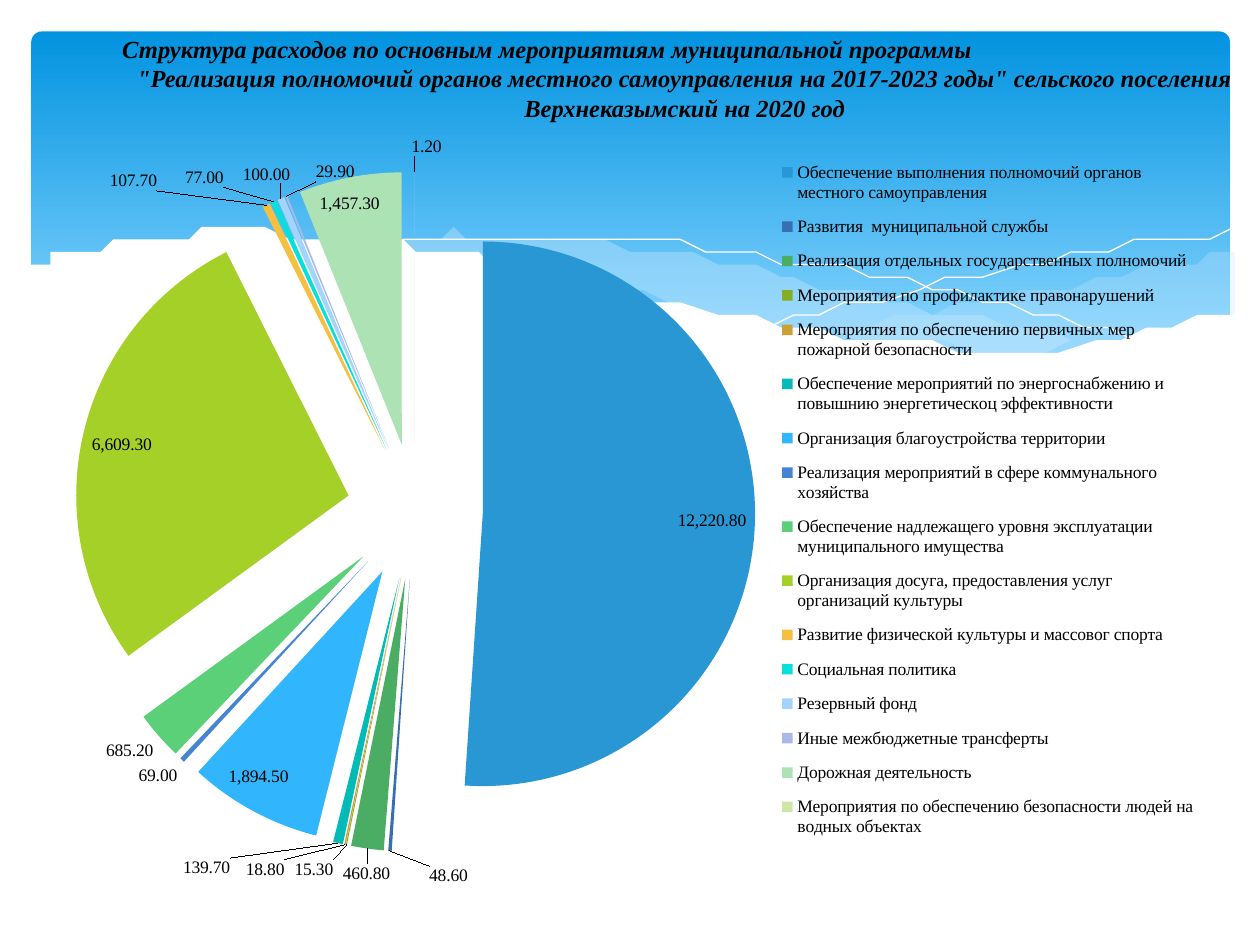
from lxml import etree
from pptx import Presentation
from pptx.chart.data import CategoryChartData
from pptx.dml.color import RGBColor
from pptx.enum.chart import XL_CHART_TYPE, XL_LABEL_POSITION, XL_LEGEND_POSITION
from pptx.enum.shapes import MSO_SHAPE
from pptx.enum.text import MSO_ANCHOR, MSO_AUTO_SIZE, PP_ALIGN
from pptx.oxml.ns import qn
from pptx.util import Inches, Pt

prs = Presentation()
prs.slide_width, prs.slide_height = Inches(10), Inches(7.5)
U = prs.slide_width // 100
s = prs.slides.add_slide(prs.slide_layouts[5])


def rgb(value):
    return RGBColor.from_string(value)


def add_layout(parent, index, **values):
    for old in parent.findall(qn("c:layout")):
        parent.remove(old)
    layout = etree.Element(qn("c:layout"))
    manual = etree.SubElement(layout, qn("c:manualLayout"))
    for key, value in values.items():
        etree.SubElement(manual, qn(f"c:{key}")).set("val", str(value))
    parent.insert(index, layout)


banner = s.shapes.add_shape(MSO_SHAPE.ROUNDED_RECTANGLE, *[round(v * U) for v in (2.5, 2.5, 95.1, 27)])
banner.adjustments[0] = 0.03
banner.shadow.inherit = False
banner.line.fill.background()
banner.fill.gradient()
banner.fill.gradient_angle = 270
for stop, position, color in zip(banner.fill.gradient_stops, (0, 0.9), ("0293E0", "83D3FE")):
    stop.position = position
    stop.color.rgb = rgb(color)

waves = [
    ("C6E7FC", 29, [[(97.6, 20), (83, 23), (66, 26.5)],
                    [(66, 26.5), (78, 27.7), (88, 27.3), (97.6, 24.7)]]),
    ("C6E7FC", 40, [[(89.3, 27.3), (74, 24.7), (60, 21.4), (46.5, 19.1), (36, 18.5), (28.6, 19.1)],
                    [(28.6, 19.1), (45, 22.2), (60, 25.5), (75, 27.6), (89.3, 27.3)]]),
    (None, 0, [[(31, 19.5), (41.6, 18.7), (58, 20), (76, 23.3), (90.7, 27.2)]]),
    (None, 0, [[(61.3, 25.7), (80.6, 21), (97.5, 18.5)]]),
    ("FFFFFF", 100, [[(97.7, 24.6), (82.3, 27.7), (64.8, 26.2), (44.7, 22),
                      (31.6, 19.4), (17.7, 18.4), (7.6, 19.5), (2.3, 21.3)],
                     [(2.3, 32.9), (97.7, 32.9)]]),
]
STEPS = 8
for color, opacity, curves in waves:
    points = []
    for knots in curves:
        padded = [knots[0], *knots, knots[-1]]
        for a, b, c, d in zip(padded, padded[1:], padded[2:], padded[3:]):
            for t in [k / STEPS for k in range(STEPS)]:
                points.append([q + t / 2 * (r - p + t * (2 * p - 5 * q + 4 * r - v + t * (3 * q - p - 3 * r + v)))
                               for p, q, r, v in zip(a, b, c, d)])
        points.append(knots[-1])
    builder = s.shapes.build_freeform(*points[0], scale=U)
    builder.add_line_segments(points[1:], close=bool(color))
    wave = builder.convert_to_shape()
    wave.shadow.inherit = False
    if color:
        wave.fill.solid()
        wave.fill.fore_color.rgb = rgb(color)
        wave.line.fill.background()
        for clr in wave.fill._xPr.iter(qn("a:srgbClr")):
            etree.SubElement(clr, qn("a:alpha")).set("val", str(opacity * 1000))
    else:
        wave.fill.background()
        wave.line.color.rgb = rgb("FFFFFF")
        wave.line.width = Pt(0)

title = s.shapes.title
s.shapes._spTree.append(title._element)
for name, value in dict(left=6.3, top=2.7, width=93.7, height=8.7).items():
    setattr(title, name, round(value * U))
tf = title.text_frame
for name, value in dict(word_wrap=True, auto_size=MSO_AUTO_SIZE.NONE, margin_top=0,
                        vertical_anchor=MSO_ANCHOR.TOP).items():
    setattr(tf, name, value)
tf.text = ("Структура расходов по основным мероприятиям муниципальной программы\n"
           "\"Реализация полномочий органов местного самоуправления на 2017-2023 годы\" "
           "сельского поселения Верхнеказымский на 2020 год")
for p, align in zip(tf.paragraphs, (PP_ALIGN.LEFT, PP_ALIGN.CENTER)):
    p.alignment = align
    p.space_before = Pt(0)
    for name, value in dict(size=Pt(14), name="Times New Roman", bold=True, italic=True).items():
        setattr(p.runs[0].font, name, value)
    p.runs[0].font.color.rgb = rgb("000000")
tf.paragraphs[0]._p.get_or_add_pPr().set("marL", str(round(2.4 * U)))

expenses = [
    ("Обеспечение выполнения полномочий органов местного самоуправления", 12220.8, "2997D3"),
    ("Развития  муниципальной службы", 48.6, "386FB3"),
    ("Реализация отдельных государственных полномочий", 460.8, "4BAD64"),
    ("Мероприятия по профилактике правонарушений", 15.3, "89AD22"),
    ("Мероприятия по обеспечению первичных мер пожарной безопасности", 18.8, "CBA035"),
    ("Обеспечение мероприятий по энергоснабжению и повышнию энергетическоц эффективности", 139.7, "03BBB6"),
    ("Организация благоустройства территории", 1894.5, "31B6FD"),
    ("Реализация мероприятий в сфере коммунального хозяйства", 69, "4584D3"),
    ("Обеспечение надлежащего уровня эксплуатации муниципального имущества", 685.2, "5BD078"),
    ("Организация досуга, предоставления услуг организаций культуры", 6609.3, "A5D028"),
    ("Развитие физической культуры и массовог спорта", 107.7, "F5C040"),
    ("Социальная политика", 77, "05E0DB"),
    ("Резервный фонд", 100, "A2D4FE"),
    ("Иные межбюджетные трансферты", 29.9, "A8B9E3"),
    ("Дорожная деятельность", 1457.3, "ADE2B5"),
    ("Мероприятия по обеспечению безопасности людей на водных объектах", 1.2, "CDE5A5"),
]
data = CategoryChartData(number_format="#,##0.00")
data.categories = [row[0] for row in expenses]
data.add_series("Series 1", [row[1] for row in expenses])
chart = s.shapes.add_chart(XL_CHART_TYPE.PIE, *[round(v * U) for v in (2, 9.9, 93.7, 61.4)], data).chart
chart.has_title = False
chart.has_legend = True
chart.legend.position = XL_LEGEND_POSITION.RIGHT
chart.legend.include_in_layout = False
plot = chart.plots[0]
plot.vary_by_categories = True
series = plot.series[0]
labels = series.data_labels
for name, value in dict(show_value=True, number_format="#,##0.00", number_format_is_linked=False,
                        position=XL_LABEL_POSITION.BEST_FIT).items():
    setattr(labels, name, value)
for i, (_, _, color) in enumerate(expenses):
    fill = series.points[i].format.fill
    fill.solid()
    fill.fore_color.rgb = rgb(color)

fonts = [(chart.font, "Cabin"), (chart.legend.font, "Times New Roman"), (labels.font, "Times New Roman")]
shifts = {1: 0.05, 2: 0.02, 3: -0.01, 4: -0.05, 5: -0.09, 10: -0.09, 11: -0.04, 12: 0.01, 13: 0.06, 15: 0.01}
for i, shift in shifts.items():
    label = series.points[i].data_label
    label.position = XL_LABEL_POSITION.BEST_FIT
    fonts.append((label.font, "Times New Roman"))
    add_layout(label._dLbl, 1, x=shift, y=0.01 if i < 6 else -0.01)
for font, face in fonts:
    font.name = face
    font.size = Pt(10)
    font.color.rgb = rgb("000000")

explosion = etree.Element(qn("c:explosion"))
explosion.set("val", "25")
series._element.find(qn("c:dPt")).addprevious(explosion)
add_layout(chart._chartSpace.chart.plotArea, 0, layoutTarget="inner", xMode="edge", yMode="edge",
           x=0.04, y=0.06, w=0.58, h=0.88)
add_layout(chart.legend._element, 1, xMode="edge", yMode="edge", x=0.64, y=0.03, w=0.35, h=0.91)

prs.save("out.pptx")
